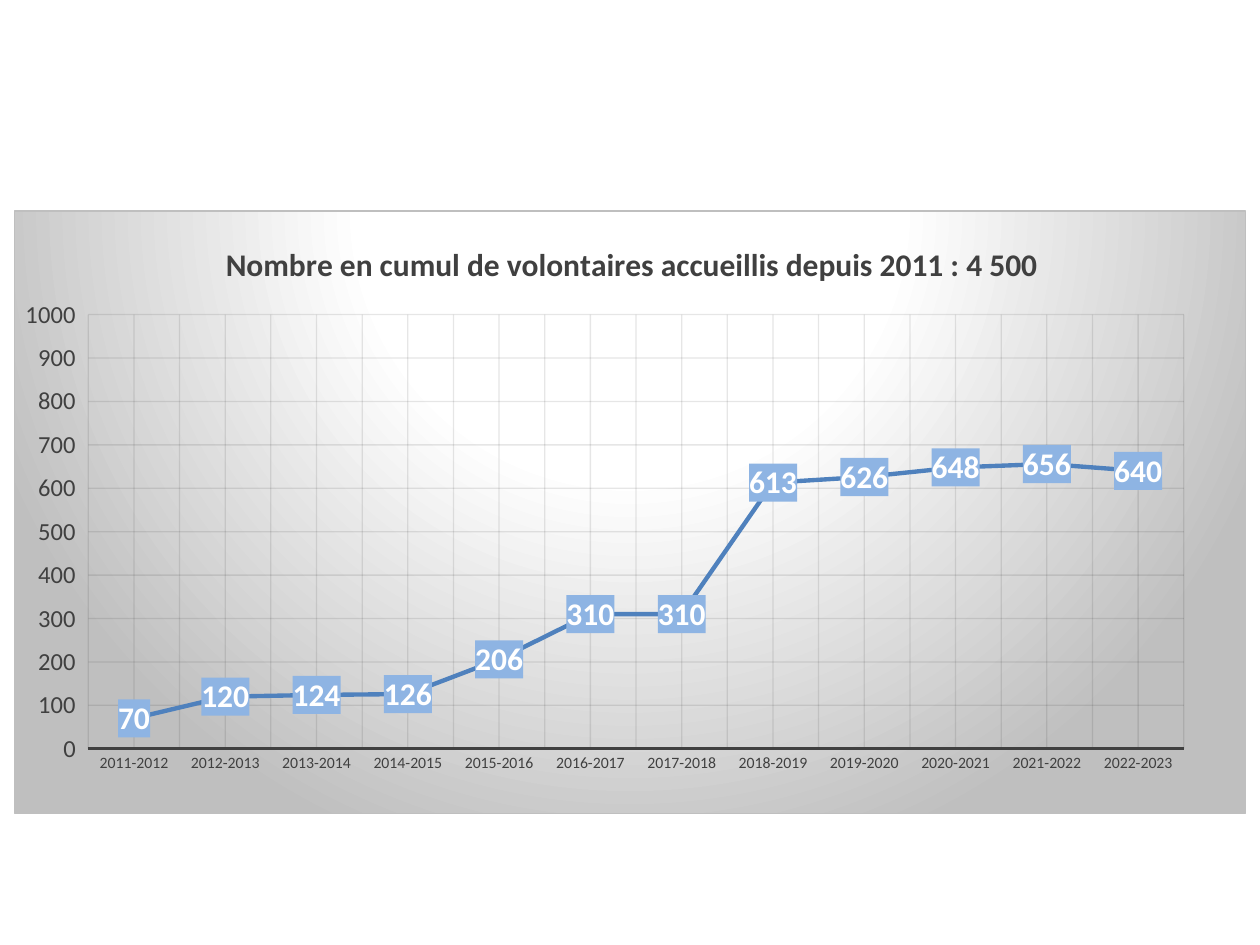
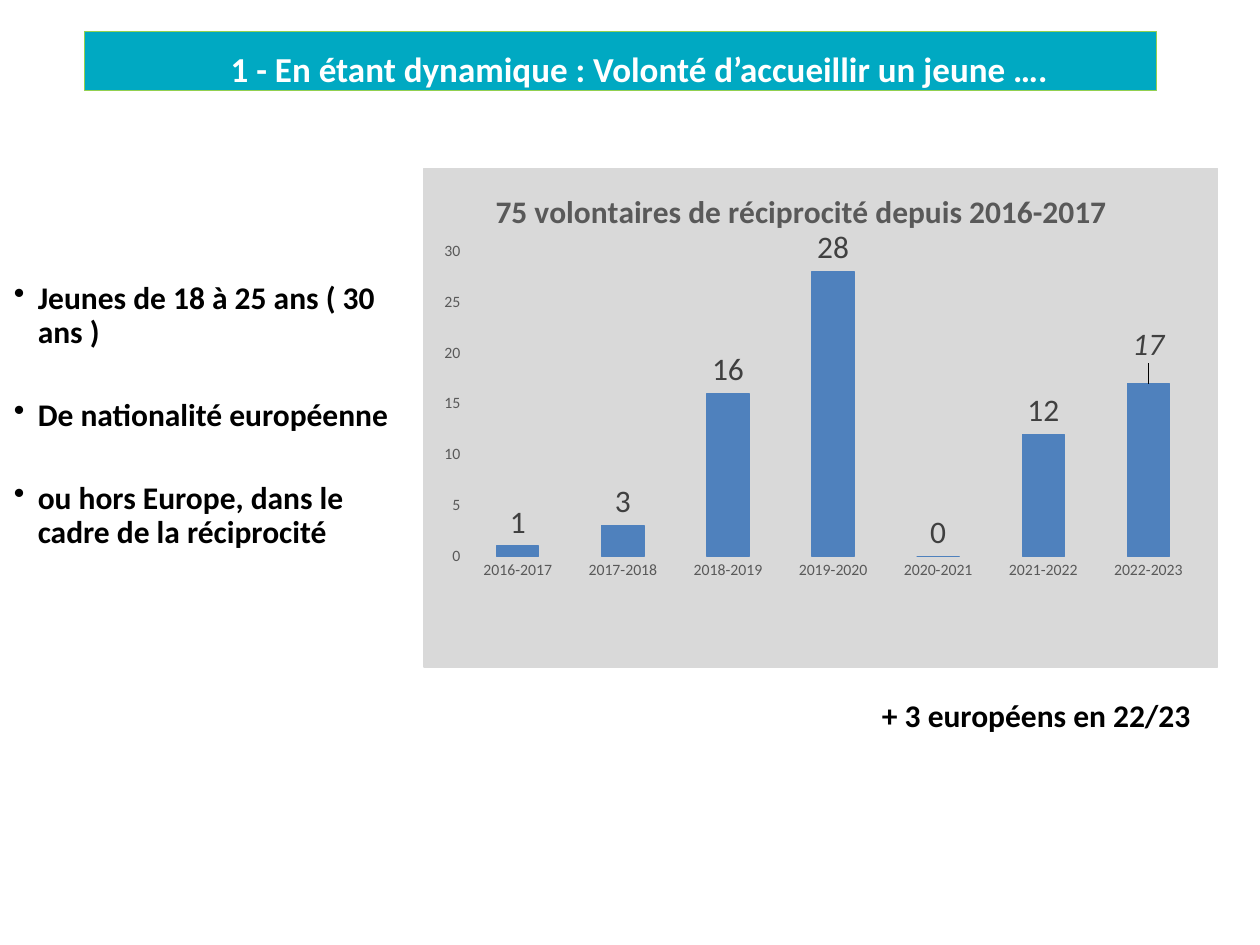
from dataclasses import dataclass
from typing import Optional

from lxml import etree
from pptx import Presentation
from pptx.chart.axis import CategoryAxis, ValueAxis
from pptx.chart.chart import Chart
from pptx.chart.data import CategoryChartData
from pptx.dml.color import RGBColor
from pptx.dml.line import LineFormat
from pptx.enum.chart import XL_CHART_TYPE, XL_LABEL_POSITION, XL_MARKER_STYLE, XL_TICK_MARK
from pptx.enum.shapes import MSO_SHAPE
from pptx.enum.text import PP_ALIGN
from pptx.oxml import parse_xml
from pptx.oxml.ns import nsdecls, qn
from pptx.slide import Slide
from pptx.text.text import Font, TextFrame
from pptx.util import Inches, Pt

LINE_MARKERS = XL_CHART_TYPE.LINE_MARKERS
COLUMNS = XL_CHART_TYPE.COLUMN_CLUSTERED
CENTER_LABEL = XL_LABEL_POSITION.CENTER
OUTSIDE_LABEL = XL_LABEL_POSITION.OUTSIDE_END
CIRCLE = XL_MARKER_STYLE.CIRCLE
NO_TICK = XL_TICK_MARK.NONE
OUTER_TICK = XL_TICK_MARK.OUTSIDE
RECTANGLE = MSO_SHAPE.RECTANGLE
CENTERED = PP_ALIGN.CENTER

FONT_NAME = "Calibri"
WHITE = RGBColor(0xFF, 0xFF, 0xFF)
BLACK = RGBColor(0x00, 0x00, 0x00)
TEAL = RGBColor(0x00, 0xA9, 0xC2)
GREEN = RGBColor(0x92, 0xD0, 0x50)
BLUE = RGBColor(0x4F, 0x81, 0xBD)
LIGHT_BLUE = RGBColor(0x8E, 0xB4, 0xE3)
DARK_GREY = RGBColor(0x40, 0x40, 0x40)
MID_GREY = RGBColor(0x59, 0x59, 0x59)
SILVER = RGBColor(0xBF, 0xBF, 0xBF)
PALE_GREY = RGBColor(0xD9, 0xD9, 0xD9)
GRID_BLACK = RGBColor(0x0D, 0x0D, 0x0D)

SOLID_FILL = f'<a:solidFill><a:srgbClr val="{PALE_GREY}"/></a:solidFill>'
RADIAL_FILL = (
    f'<a:gradFill><a:gsLst><a:gs pos="0"><a:srgbClr val="{WHITE}"/></a:gs>'
    f'<a:gs pos="39000"><a:srgbClr val="{WHITE}"/></a:gs>'
    f'<a:gs pos="100000"><a:srgbClr val="{SILVER}"/></a:gs></a:gsLst>'
    '<a:path path="circle"><a:fillToRect l="50000" t="-80000" r="50000" b="180000"/>'
    "</a:path></a:gradFill>"
)


@dataclass(frozen=True)
class Area:
    left: float
    top: float
    width: float
    height: float

    def lengths(self) -> tuple:
        return tuple(Inches(side) for side in (self.left, self.top, self.width, self.height))


@dataclass(frozen=True)
class ChartDesign:
    kind: XL_CHART_TYPE
    area: Area
    plot_area: Area
    title: str
    title_left: float
    title_top: float
    first_year: int
    values: tuple[int, ...]
    fill: str
    border: RGBColor
    text_color: RGBColor
    title_color: RGBColor
    axis_line: RGBColor
    axis_width: float
    grid: RGBColor
    grid_alpha: Optional[int]
    value_size: int
    maximum: int
    step: int
    value_tick: XL_TICK_MARK
    label_color: RGBColor
    label_bold: bool
    label_position: XL_LABEL_POSITION


WELCOMED = ChartDesign(
    LINE_MARKERS, Area(0.11, 1.67, 9.78, 4.79), Area(0.06, 0.172, 0.89, 0.721),
    "Nombre en cumul de volontaires accueillis depuis 2011 : 4 500", 0.167, 0.042,
    2011, (70, 120, 124, 126, 206, 310, 310, 613, 626, 648, 656, 640),
    RADIAL_FILL, SILVER, DARK_GREY, DARK_GREY, DARK_GREY, 1.5, GRID_BLACK, 10,
    14, 1000, 100, OUTER_TICK, WHITE, True, CENTER_LABEL,
)
RECIPROCITY = ChartDesign(
    COLUMNS, Area(3.36, 1.33, 6.31, 3.97), Area(0.052, 0.166, 0.927, 0.612),
    "75 volontaires de réciprocité depuis 2016-2017", 0.083, 0.031,
    2016, (1, 3, 16, 28, 0, 12, 17),
    SOLID_FILL, PALE_GREY, MID_GREY, MID_GREY, PALE_GREY, 0.75, PALE_GREY, None,
    9, 30, 5, NO_TICK, DARK_GREY, False, OUTSIDE_LABEL,
)
PROFILE = (
    "Jeunes de 18 à 25 ans ( 30 ans )",
    "De nationalité européenne",
    "ou hors Europe, dans le cadre de la réciprocité",
)


def style_font(font: Font, size: float, color: RGBColor, bold: bool = False) -> None:
    font.name = FONT_NAME
    font.size = Pt(size)
    font.bold = bold
    font.color.rgb = color


def style_line(line: LineFormat, color: RGBColor, width: float) -> None:
    line.color.rgb = color
    line.width = Pt(width)


def style_grid(line: LineFormat, design: ChartDesign) -> None:
    style_line(line, design.grid, 0.75)
    if design.grid_alpha is not None:
        color = line.fill._xPr.find(".//" + qn("a:srgbClr"))
        etree.SubElement(color, qn("a:alpha"), val=str(design.grid_alpha * 1000))


def manual_layout(**settings: object) -> etree._Element:
    entries = "".join(f'<c:{name} val="{value}"/>' for name, value in settings.items())
    return parse_xml(
        f'<c:layout {nsdecls("c")}><c:manualLayout>{entries}</c:manualLayout></c:layout>'
    )


def place_layout(parent: etree._Element, layout: etree._Element, index: int) -> None:
    present = parent.find(qn("c:layout"))
    if present is not None:
        parent.remove(present)
    parent.insert(index, layout)


def style_background(chart: Chart, design: ChartDesign) -> None:
    properties = parse_xml(
        f'<c:spPr {nsdecls("c", "a")}>{design.fill}<a:ln w="9525"><a:solidFill>'
        f'<a:srgbClr val="{design.border}"/></a:solidFill></a:ln></c:spPr>'
    )
    chart._chartSpace.find(qn("c:chart")).addnext(properties)


def style_title(chart: Chart, design: ChartDesign) -> None:
    chart.has_title = True
    title = chart.chart_title
    title.text_frame.text = design.title
    style_font(title.text_frame.paragraphs[0].font, 18, design.title_color, True)
    layout = manual_layout(
        xMode="edge", yMode="edge", x=design.title_left, y=design.title_top
    )
    place_layout(title._element, layout, 1)


def style_plot_area(chart: Chart, design: ChartDesign) -> None:
    area = design.plot_area
    layout = manual_layout(
        layoutTarget="inner", xMode="edge", yMode="edge",
        x=area.left, y=area.top, w=area.width, h=area.height,
    )
    place_layout(chart._chartSpace.find(".//" + qn("c:plotArea")), layout, 0)


def style_category_axis(axis: CategoryAxis, design: ChartDesign) -> None:
    axis.major_tick_mark = axis.minor_tick_mark = NO_TICK
    style_font(axis.tick_labels.font, 9, design.text_color)
    style_line(axis.format.line, design.axis_line, design.axis_width)


def style_value_axis(axis: ValueAxis, design: ChartDesign) -> None:
    axis.minimum_scale = 0
    axis.maximum_scale = design.maximum
    axis.major_unit = design.step
    axis.major_tick_mark = design.value_tick
    axis.minor_tick_mark = NO_TICK
    axis.format.line.fill.background()
    axis.has_major_gridlines = True
    style_grid(axis.major_gridlines.format.line, design)
    style_font(axis.tick_labels.font, design.value_size, design.text_color)


def add_year_chart(page: Slide, design: ChartDesign) -> Chart:
    data = CategoryChartData()
    data.categories = [
        f"{year}-{year + 1}"
        for year in range(design.first_year, design.first_year + len(design.values))
    ]
    data.add_series("Volontaires", design.values)
    chart = page.shapes.add_chart(design.kind, *design.area.lengths(), data).chart
    style_font(chart.font, 10, BLACK)
    chart.has_legend = False
    style_background(chart, design)
    style_title(chart, design)
    style_plot_area(chart, design)
    style_category_axis(chart.category_axis, design)
    style_value_axis(chart.value_axis, design)
    chart.plots[0].vary_by_categories = False
    labels = chart.plots[0].series[0].data_labels
    labels.show_value = True
    labels.position = design.label_position
    style_font(labels.font, 18, design.label_color, design.label_bold)
    return chart


def add_text_box(page: Slide, area: Area) -> TextFrame:
    frame = page.shapes.add_textbox(*area.lengths()).text_frame
    frame.word_wrap = True
    return frame


def build_welcomed_page(page: Slide) -> None:
    chart = add_year_chart(page, WELCOMED)
    axis = chart.category_axis
    axis.has_major_gridlines = axis.has_minor_gridlines = True
    for gridlines in (axis.major_gridlines, axis._element.minorGridlines):
        if hasattr(gridlines, "format"):
            style_grid(gridlines.format.line, WELCOMED)
        else:
            gridlines.append(parse_xml(
                f'<c:spPr {nsdecls("c", "a")}><a:ln w="9525"><a:solidFill>'
                f'<a:srgbClr val="{GRID_BLACK}"><a:alpha val="10000"/></a:srgbClr>'
                "</a:solidFill></a:ln></c:spPr>"
            ))
    series = chart.plots[0].series[0]
    series.smooth = False
    style_line(series.format.line, BLUE, 2.5)
    series.marker.style = CIRCLE
    series.marker.size = 17
    series.marker.format.fill.solid()
    series.marker.format.fill.fore_color.rgb = BLUE
    series.marker.format.line.fill.background()
    label_fill = parse_xml(
        f'<c:spPr {nsdecls("c", "a")}><a:solidFill><a:srgbClr val="{LIGHT_BLUE}"/>'
        "</a:solidFill></c:spPr>"
    )
    series.data_labels._element.find(qn("c:txPr")).addprevious(label_fill)


def add_banner(page: Slide, text: str) -> None:
    banner = page.shapes.add_shape(RECTANGLE, *Area(0.67, 0.25, 8.51, 0.47).lengths())
    banner.shadow.inherit = False
    banner.fill.solid()
    banner.fill.fore_color.rgb = TEAL
    style_line(banner.line, GREEN, 0.72)
    frame = banner.text_frame
    frame.margin_left, frame.margin_top = Inches(0.3), Inches(0.13)
    frame.margin_right = frame.margin_bottom = 0
    frame.vertical_anchor = None
    frame._txBody.bodyPr.set("anchor", "t")
    para = frame.paragraphs[0]
    para.text = text
    para.alignment = CENTERED
    style_font(para.font, 20, WHITE, True)


def add_profile(page: Slide) -> None:
    frame = add_text_box(page, Area(-0.03, 2.2, 3.38, 3.1))
    frame.margin_left = frame.margin_right = Inches(0.07)
    frame.margin_top = frame.margin_bottom = Inches(0.04)
    for index, text in enumerate(PROFILE):
        para = frame.paragraphs[0] if index == 0 else frame.add_paragraph()
        para.text = text
        para.line_spacing = 0.9
        para.space_after = Pt(28)
        style_font(para.font, 18, BLACK, True)
        properties = para._p.get_or_add_pPr()
        properties.set("marL", str(Inches(0.26)))
        properties.set("indent", str(Inches(-0.19)))
        bullet = parse_xml(f'<a:buChar {nsdecls("a")} char="•"/>')
        properties.find(qn("a:defRPr")).addprevious(bullet)


def build_reciprocity_page(page: Slide) -> None:
    add_profile(page)
    add_banner(page, "1 - En étant dynamique : Volonté d’accueillir un jeune ….")
    chart = add_year_chart(page, RECIPROCITY)
    chart.plots[0].gap_width = 150
    series = chart.plots[0].series[0]
    series.format.fill.solid()
    series.format.fill.fore_color.rgb = BLUE
    style_line(series.format.line, BLUE, 0.75)
    last_label = series.points[len(RECIPROCITY.values) - 1].data_label
    style_font(last_label.font, 18, DARK_GREY)
    last_label.font.italic = True
    last_label.position = OUTSIDE_LABEL
    raised = series.data_labels._element.find(qn("c:dLbl"))
    place_layout(raised, manual_layout(x=0, y=-0.03), 1)
    frame = add_text_box(page, Area(6.83, 5.51, 3, 0.37))
    frame.margin_left = Inches(0.17)
    para = frame.paragraphs[0]
    para.text = "+ 3 européens en 22/23"
    para.line_spacing = 0.9
    style_font(para.font, 18, BLACK, True)


def main() -> None:
    deck = Presentation()
    deck.slide_width, deck.slide_height = Inches(10), Inches(7.5)
    for build_page in (build_welcomed_page, build_reciprocity_page):
        build_page(deck.slides.add_slide(deck.slide_layouts[6]))
    deck.save("out.pptx")


if __name__ == "__main__":
    main()
